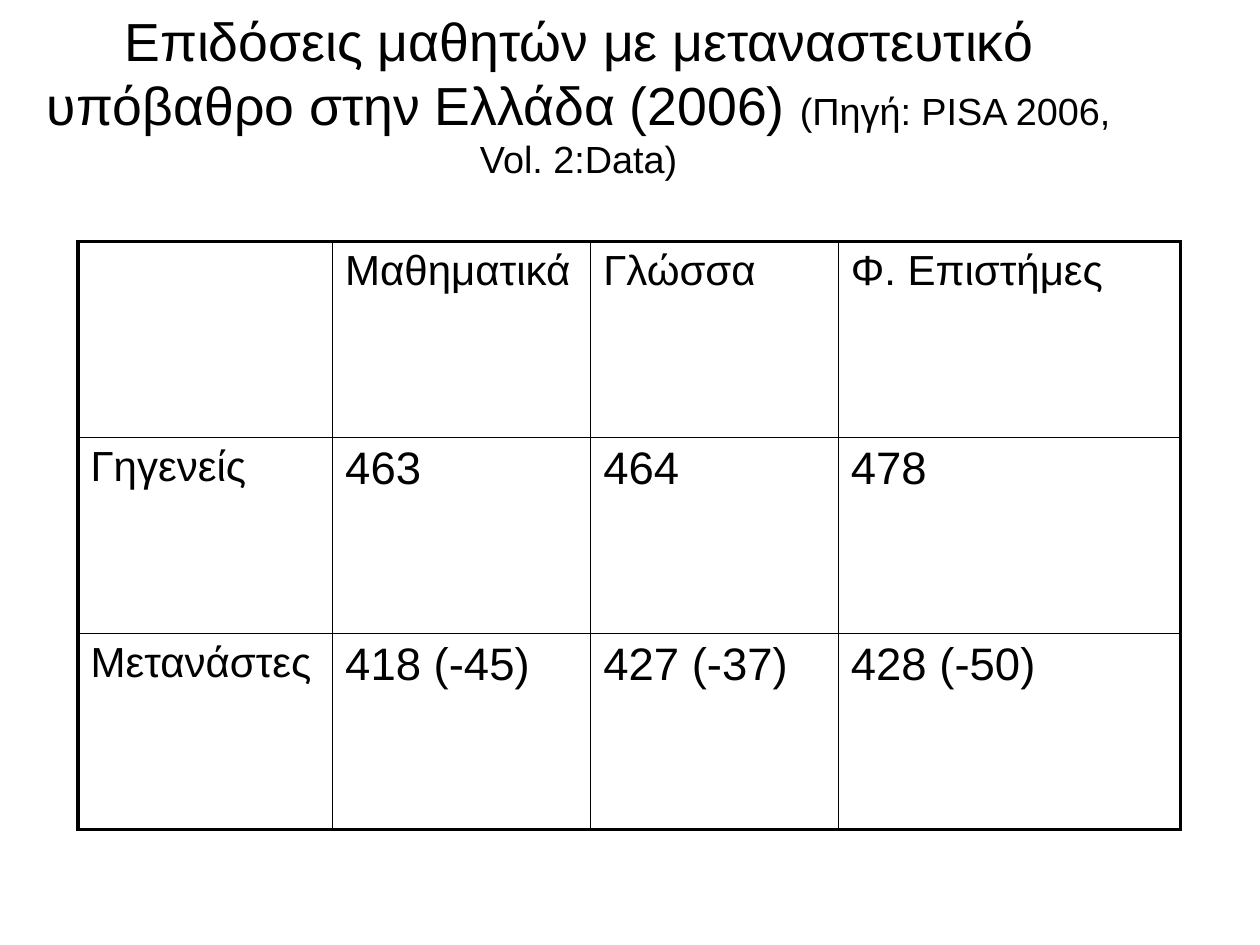
"""Builds a slide with a table of pupils' scores by origin."""
from lxml import etree
from pptx import Presentation
from pptx import util as u
from pptx.dml.color import RGBColor
from pptx.enum import text
from pptx.oxml import ns

INK = "000000"
THIN, THICK = 1, 2.25
COLUMN_WIDTHS = [145.5, 147.5, 141.5, 195.5]
ROW_HEIGHT = 112
SCORES = [
    ["", "Μαθηματικά", "Γλώσσα", "Φ. Επιστήμες"],
    ["Γηγενείς", "463", "464", "478"],
    ["Μετανάστες", "418 (-45)", "427 (-37)", "428 (-50)"],
]


def color(value):
    return RGBColor.from_string(value)


def add_text(para, words, size, font="Arial", ink=INK):
    span = para.add_run()
    span.text = words
    span.font.size = u.Pt(size)
    span.font.name = font
    span.font.color.rgb = color(ink)


def set_borders(cell, widths, ink=INK):
    properties = cell._tc.get_or_add_tcPr()
    for position, (side, width) in enumerate(widths.items()):
        line = etree.Element(ns.qn(f"a:ln{side}"), w=str(u.Pt(width)))
        fill = etree.SubElement(line, ns.qn("a:solidFill"))
        etree.SubElement(fill, ns.qn("a:srgbClr"), val=ink)
        properties.insert(position, line)


class ScoreSlide:
    def __init__(self, page, label_size=24, score_size=26):
        self.page = page
        self.label_size = label_size
        self.score_size = score_size

    def title(self, left, top, width, height, spans):
        box = self.page.shapes.add_textbox(*map(u.Pt, (left, top, width, height)))
        frame = box.text_frame
        frame.word_wrap = True
        frame.vertical_anchor = text.MSO_ANCHOR.MIDDLE
        para = frame.paragraphs[0]
        para.alignment = text.PP_ALIGN.CENTER
        for words, size in spans:
            add_text(para, words, size)

    def table(self, left, top, rows, widths, row_height):
        area = (left, top, sum(widths), row_height * len(rows))
        grid = self.page.shapes.add_table(
            len(rows), len(widths), *map(u.Pt, area)).table
        grid.first_row = grid.horz_banding = False
        for column, width in zip(grid.columns, widths):
            column.width = u.Pt(width)
        last_row, last_column = len(rows) - 1, len(widths) - 1
        for r, row in enumerate(rows):
            grid.rows[r].height = u.Pt(row_height)
            for c, words in enumerate(row):
                cell = grid.cell(r, c)
                cell.fill.background()
                if words:
                    size = self.score_size if r and c else self.label_size
                    add_text(cell.text_frame.paragraphs[0], words, size)
                set_borders(cell, {
                    "L": THIN if c else THICK,
                    "R": THICK if c == last_column else THIN,
                    "T": THIN if r else THICK,
                    "B": THICK if r == last_row else THIN,
                })


def main():
    deck = Presentation()
    deck.slide_width, deck.slide_height = u.Pt(720), u.Pt(540)
    slide = ScoreSlide(deck.slides.add_slide(deck.slide_layouts[6]))
    slide.title(15, 18, 631.5, 72, [
        ("Επιδόσεις μαθητών με μεταναστευτικό υπόβαθρο στην Ελλάδα (2006) ", 30.6),
        ("(Πηγή: PISA 2006, Vol. 2:Data)", 21.6),
    ])
    slide.table(44.6, 138, SCORES, COLUMN_WIDTHS, ROW_HEIGHT)
    deck.save("out.pptx")


if __name__ == "__main__":
    main()
